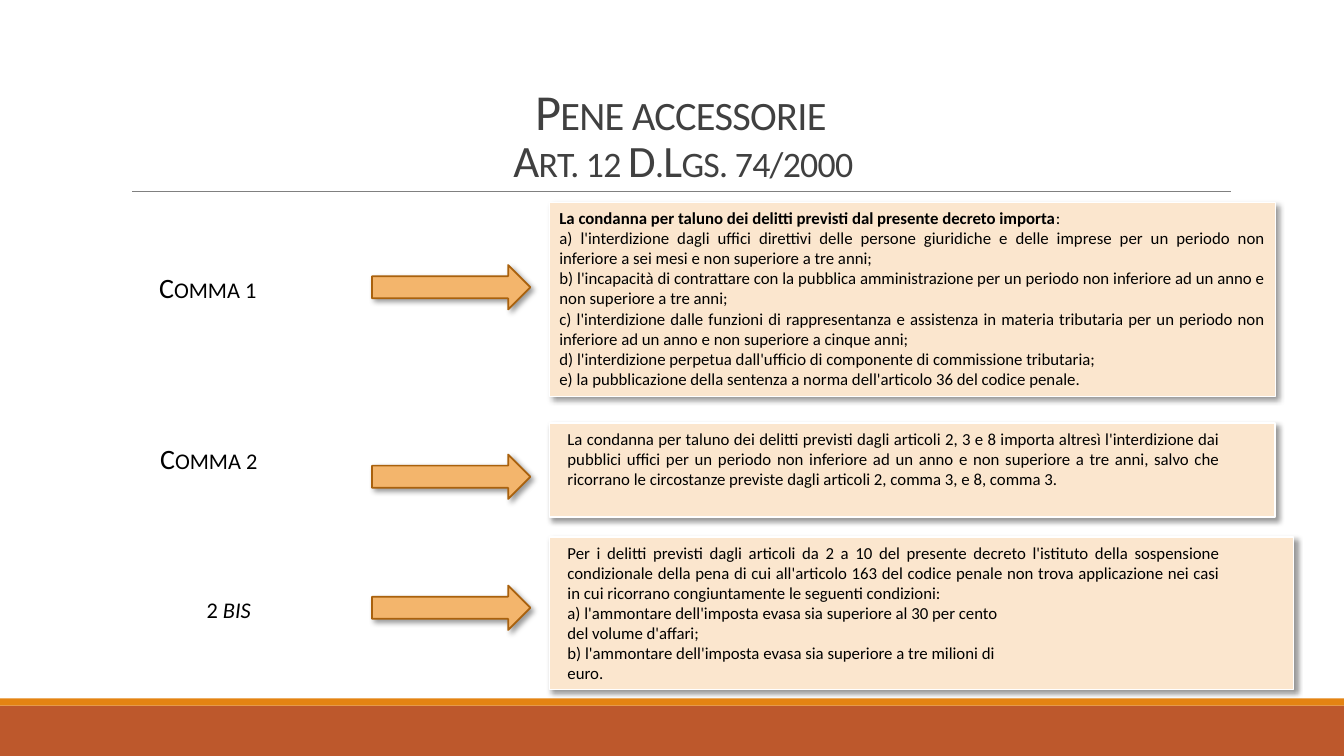
from lxml import etree
from pptx import Presentation, util as u
from pptx.dml.color import RGBColor
from pptx.enum import shapes, text
from pptx.oxml.ns import qn

COLUMNS, ROWS = 13.33, 7.5
CELL = u.Inches(1)
FONT = "Calibri"
INK, TITLE_INK, RULE = "000000", "404040", "808080"
ARROW_FILL, ARROW_EDGE = "F3B56C", "A9610D"
PANEL_FILL, PANEL_EDGE = "FBE6CE", "FFFFFF"
ARROW_LEFT, ARROW_WIDTH = 3.69, 1.57
PANEL_LEFT, TEXT_LEFT, TEXT_WIDTH = 5.45, 5.53, 6.67
LABEL_HEIGHT = 0.44

BANDS = [(7, 0.5, "BD582C"), (6.93, 0.07, "E48312")]
TITLE = [("Pene accessorie", 36), ("Art. 12 D.Lgs. 74/2000", 32)]
BODY = {"size": u.Pt(12)}
BOLD = {**BODY, "bold": True}
LABEL = {"size": u.Pt(20)}
ITALIC = {**LABEL, "italic": True}

COMMAS = [
    {
        "label": [("Comma 1", LABEL)],
        "label_box": (1.48, 2.63, 2.45),
        "arrow_top": 2.63,
        "panel": (2.01, 7.2, 1.92, 0.75),
        "text_box": (PANEL_LEFT, 7.2, 1.92),
        "paragraphs": [
            [("La condanna per taluno dei delitti previsti dal presente decreto importa", BOLD), (":", BODY)],
            [("a) l'interdizione dagli uffici direttivi delle persone giuridiche e delle imprese "
              "per un periodo non inferiore a sei mesi e non superiore a tre anni;", BODY)],
            [("b) l'incapacità di contrattare con la pubblica amministrazione per un periodo "
              "non inferiore ad un anno e non superiore a tre anni;", BODY)],
            [("c) l'interdizione dalle funzioni di rappresentanza e assistenza in materia tributaria "
              "per un periodo non inferiore ad un anno e non superiore a cinque anni;", BODY)],
            [("d) l'interdizione perpetua dall'ufficio di componente di commissione tributaria;", BODY)],
            [("e) la pubblicazione della sentenza a norma dell'articolo 36 del codice penale.", BODY)],
        ],
    },
    {
        "label": [("Comma 2", LABEL)],
        "label_box": (1.49, 4.33, 1.21),
        "arrow_top": 4.51,
        "panel": (4.2, 7.2, 0.93, 1.25),
        "text_box": (TEXT_LEFT, TEXT_WIDTH, 0.71),
        "paragraphs": [
            [("La condanna per taluno dei delitti previsti dagli articoli 2, 3 e 8 importa altresì "
              "l'interdizione dai pubblici uffici per un periodo non inferiore ad un anno e non "
              "superiore a tre anni, salvo che ricorrano le circostanze previste dagli articoli 2, "
              "comma 3, e 8, comma 3.", BODY)],
        ],
    },
    {
        "label": [("2 ", LABEL), ("bis", ITALIC)],
        "label_box": (1.95, 5.81, 0.75),
        "arrow_top": 5.81,
        "panel": (5.33, 7.38, 1.51, 1.25),
        "text_box": (TEXT_LEFT, TEXT_WIDTH, 1.51),
        "paragraphs": [
            [("Per i delitti previsti dagli articoli da 2 a 10 del presente decreto l'istituto della "
              "sospensione condizionale della pena di cui all'articolo 163 del codice penale non trova "
              "applicazione nei casi in cui ricorrano congiuntamente le seguenti condizioni:", BODY)],
            [("a) l'ammontare dell'imposta evasa sia superiore al 30 per cento", BODY)],
            [("del volume d'affari;", BODY)],
            [("b) l'ammontare dell'imposta evasa sia superiore a tre milioni di", BODY)],
            [("euro.", BODY)],
        ],
    },
]


def color(value):
    return RGBColor.from_string(value)


def cells(*lengths):
    return [round(length * CELL) for length in lengths]


def apply(target, values):
    for name, value in values.items():
        setattr(target, name, value)


def add_span(para, words, values, ink=INK, extra=None):
    span = para.add_run()
    span.text = words
    apply(span.font, {"name": FONT, **values})
    span.font.color.rgb = color(ink)
    for name, value in (extra or {}).items():
        span.font._element.set(name, value)


def add_box(page, area, wrap=True, anchor=text.MSO_ANCHOR.TOP):
    frame = page.shapes.add_textbox(*cells(*area)).text_frame
    apply(frame, {"word_wrap": wrap, "vertical_anchor": anchor})
    return frame


def add_shadow(shape):
    effects = etree.SubElement(shape._element.spPr, qn("a:effectLst"))
    shadow = etree.SubElement(effects, qn("a:outerShdw"), blurRad=str(u.Pt(4)), dist=str(u.Pt(3)),
                              dir="2700000", algn="tl", rotWithShape="0")
    tint = etree.SubElement(shadow, qn("a:srgbClr"), val=INK)
    etree.SubElement(tint, qn("a:alpha"), val="40000")


def add_block(page, kind, area, fill, edge=None, weight=1.25):
    shape = page.shapes.add_shape(kind, *cells(*area))
    shape.fill.solid()
    shape.fill.fore_color.rgb = color(fill)
    if edge:
        shape.line.color.rgb = color(edge)
        shape.line.width = u.Pt(weight)
        add_shadow(shape)
    else:
        shape.line.fill.background()
        shape.shadow.inherit = False


def add_title(page):
    frame = add_box(page, (1.2, 0.31, 11, 1.59), anchor=text.MSO_ANCHOR.BOTTOM)
    para = frame.paragraphs[0]
    apply(para, {"alignment": text.PP_ALIGN.CENTER, "line_spacing": 0.85})
    for index, (words, size) in enumerate(TITLE):
        if index:
            para.add_line_break()
        add_span(para, words, {"size": u.Pt(size)}, TITLE_INK, {"cap": "small", "spc": "-50"})


def add_rule(page):
    rule = page.shapes.add_connector(shapes.MSO_CONNECTOR.STRAIGHT, *cells(1.31, 1.9, 12.21, 1.9))
    rule.line.color.rgb = color(RULE)
    rule.line.width = u.Pt(0.5)
    etree.SubElement(rule._element.spPr, qn("a:effectLst"))


def add_comma(page, comma):
    left, top, width = comma["label_box"]
    label = add_box(page, (left, top, width, LABEL_HEIGHT), wrap=False)
    for words, values in comma["label"]:
        add_span(label.paragraphs[0], words, values, extra={"cap": "small"})

    arrow = (ARROW_LEFT, comma["arrow_top"], ARROW_WIDTH, LABEL_HEIGHT)
    add_block(page, shapes.MSO_SHAPE.RIGHT_ARROW, arrow, ARROW_FILL, ARROW_EDGE)

    top, width, height, weight = comma["panel"]
    panel = (PANEL_LEFT, top, width, height)
    add_block(page, shapes.MSO_SHAPE.RECTANGLE, panel, PANEL_FILL, PANEL_EDGE, weight)

    left, width, height = comma["text_box"]
    frame = add_box(page, (left, top, width, height))
    for index, spans in enumerate(comma["paragraphs"]):
        para = frame.add_paragraph() if index else frame.paragraphs[0]
        para.alignment = text.PP_ALIGN.JUSTIFY
        for words, values in spans:
            add_span(para, words, values)


def main():
    deck = Presentation()
    deck.slide_width, deck.slide_height = cells(COLUMNS, ROWS)
    page = deck.slides.add_slide(deck.slide_layouts[6])
    for top, height, fill in BANDS:
        add_block(page, shapes.MSO_SHAPE.RECTANGLE, (0, top, COLUMNS, height), fill)
    add_rule(page)
    add_title(page)
    for comma in COMMAS:
        add_comma(page, comma)
    deck.save("out.pptx")


if __name__ == "__main__":
    main()
